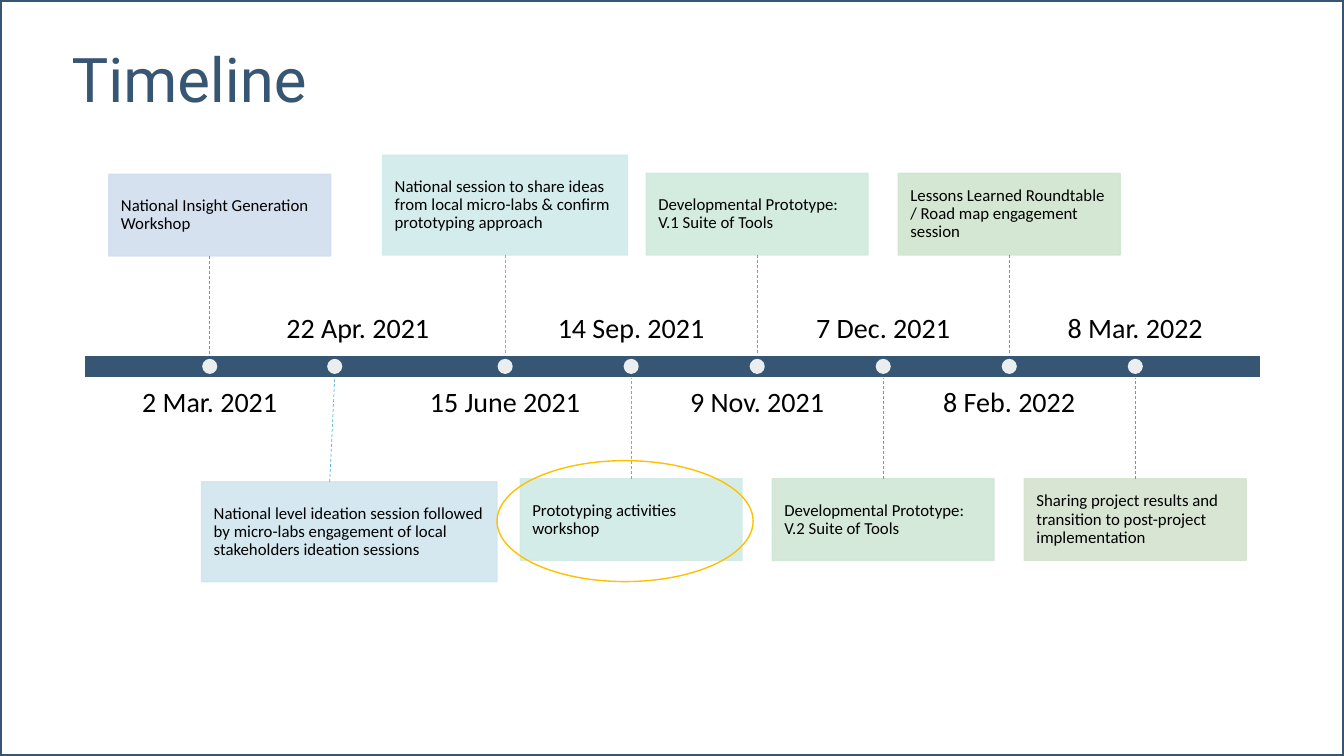
from collections import namedtuple

from lxml.etree import SubElement
from pptx import Presentation
from pptx.dml.color import RGBColor
from pptx.enum.dml import MSO_LINE
from pptx.enum.shapes import MSO_CONNECTOR, MSO_SHAPE
from pptx.enum.text import MSO_ANCHOR, MSO_AUTO_SIZE, PP_ALIGN
from pptx.oxml.ns import qn
from pptx.util import Inches, Pt

COLORS = {"navy": "365673", "white": "FFFFFF", "black": "000000", "gold": "FFC000"}

# x: position on the bar; card: left, top, width, height; stem: x at the card
Milestone = namedtuple("Milestone", "date date_x x card stem_x text fill stem")

SMALL, TALL = 0.81, 0.99
UPPER, LOWER = 1.72, 4.75
STEP = 1.25
XS = [2.08, 3.32] + [5.01 + STEP * i for i in range(6)]


def centred_card(x, top, width=2.2, height=SMALL):
    return x - width / 2, top, width, height


MILESTONES = [
    Milestone("2 Mar. 2021", XS[0], XS[0], (1.08, 1.73, 2.2, SMALL), 2.08,
              "National Insight Generation Workshop", "D2DEEF", "5B9BD5"),
    Milestone("22 Apr. 2021", 3.55, XS[1], (2, 4.78, 2.93, TALL), 3.27,
              "National level ideation session followed by micro-labs engagement "
              "of local stakeholders ideation sessions", "D1E5EE", "57B7D1"),
    Milestone("15 June 2021", XS[2], XS[2], centred_card(XS[2], 1.54, 2.43, TALL), XS[2],
              "National session to share ideas from local micro-labs & confirm "
              "prototyping approach", "D1EBEC", "53CCC5"),
    Milestone("14 Sep. 2021", XS[3], XS[3], centred_card(XS[3], LOWER), XS[3],
              "Prototyping activities workshop", "D0EAE5", "4FC7A0"),
    Milestone("9 Nov. 2021", XS[4], XS[4], centred_card(XS[4], UPPER), XS[4],
              "Developmental Prototype: V.1 Suite of Tools", "D0E9DD", "4CC27B"),
    Milestone("7 Dec. 2021", XS[5], XS[5], centred_card(XS[5], LOWER), XS[5],
              "Developmental Prototype: V.2 Suite of Tools", "D0E7D5", "48BD58"),
    Milestone("8 Feb. 2022", XS[6], XS[6], centred_card(XS[6], UPPER), XS[6],
              "Lessons Learned Roundtable / Road map engagement session", "D0E5CF", "55B646"),
    Milestone("8 Mar. 2022", XS[7], XS[7], centred_card(XS[7], LOWER), XS[7],
              "Sharing project results and transition to post-project implementation",
              "D5E3CF", "70AD47"),
]


def rgb(value):
    return RGBColor.from_string(COLORS.get(value, value))


def set_opacity(fill_parent, percent):
    """Make every solid colour below the element partly transparent."""
    for clr in fill_parent.iter(qn("a:srgbClr")):
        SubElement(clr, qn("a:alpha")).set("val", str(percent * 1000))


def add_shape(s, kind, box, fill=None, line=None, width=1, opacity=100):
    sp = s.shapes.add_shape(kind, *(Inches(v) for v in box))
    sp.shadow.inherit = False
    if fill:
        sp.fill.solid()
        sp.fill.fore_color.rgb = rgb(fill)
    else:
        sp.fill.background()
    if line:
        sp.line.color.rgb = rgb(line)
        sp.line.width = Pt(width)
    else:
        sp.line.fill.background()
    if opacity < 100:
        set_opacity(sp._element.spPr, opacity)
    return sp


def write(sp, text, size, font="Calibri", color="black", align=PP_ALIGN.LEFT,
          anchor=MSO_ANCHOR.MIDDLE, inset=0.0, spacing=0.9):
    tf = sp.text_frame
    tf.text = text
    tf.word_wrap = True
    tf.auto_size = MSO_AUTO_SIZE.NONE
    tf.vertical_anchor = anchor
    tf.margin_left = tf.margin_right = tf.margin_top = tf.margin_bottom = Inches(inset)
    p = tf.paragraphs[0]
    p.alignment = align
    p.line_spacing = spacing
    r = p.runs[0]
    r.font.size = Pt(size)
    r.font.name = font
    r.font.color.rgb = rgb(color)


def add_title(s, box):
    title = s.shapes.title
    title.left, title.top, title.width, title.height = (Inches(v) for v in box)
    write(title, "Timeline", 44, "Roboto", "navy", anchor=MSO_ANCHOR.TOP, spacing=1.0)
    title.text_frame.margin_left = Inches(0.1)
    title.text_frame.margin_top = Inches(0.05)


def add_stem(s, card, m, start_y, end_y, side):
    stem = s.shapes.add_connector(MSO_CONNECTOR.STRAIGHT, Inches(m.stem_x), Inches(start_y),
                                  Inches(m.x), Inches(end_y))
    left, _, width, _ = m.card
    if abs(left + width / 2 - m.stem_x) < 0.01:
        stem.begin_connect(card, side)
    stem.line.color.rgb = rgb(m.stem)
    stem.line.width = Pt(0.5)
    stem.line.dash_style = MSO_LINE.DASH
    SubElement(stem._element.spPr, qn("a:effectLst"))


def add_milestone(s, m, bar):
    """Place the card, stem, date and dot of one milestone around the bar."""
    _, bar_top, _, bar_height = bar
    bar_bottom = bar_top + bar_height
    _, top, _, height = m.card
    above = top < bar_top

    card = add_shape(s, MSO_SHAPE.RECTANGLE, m.card, m.fill, m.fill, opacity=90)
    write(card, m.text, 12, inset=0.12)
    if above:
        add_stem(s, card, m, top + height, bar_top, 2)
    else:
        add_stem(s, card, m, top, bar_bottom, 0)

    date_height = 0.66
    date_top = bar_bottom + 0.1 if above else bar_top - 0.1 - date_height
    date = s.shapes.add_textbox(Inches(m.date_x - 1), Inches(date_top),
                                Inches(2), Inches(date_height))
    write(date, m.date, 20, align=PP_ALIGN.CENTER,
          anchor=MSO_ANCHOR.TOP if above else MSO_ANCHOR.BOTTOM)

    dot = 0.15
    add_shape(s, MSO_SHAPE.OVAL, (m.x - dot / 2, bar_top + (bar_height - dot) / 2, dot, dot),
              "white", opacity=90)


def add_timeline(s, bar):
    add_shape(s, MSO_SHAPE.RECTANGLE, bar, "navy", "white", 1.5)
    for m in MILESTONES:
        add_milestone(s, m, bar)


def main():
    prs = Presentation()
    prs.slide_width, prs.slide_height = Inches(13.33), Inches(7.5)
    s = prs.slides.add_slide(prs.slide_layouts[5])
    add_title(s, (0.61, 0.36, 6.2, 0.84))
    add_timeline(s, (0.83, 3.52, 11.68, 0.23))
    add_shape(s, MSO_SHAPE.OVAL, (4.93, 4.57, 2.54, 1.2), line="gold")
    add_shape(s, MSO_SHAPE.RECTANGLE, (0, 0, 13.33, 7.5), line="navy", width=2.25)
    prs.save("out.pptx")


if __name__ == "__main__":
    main()
